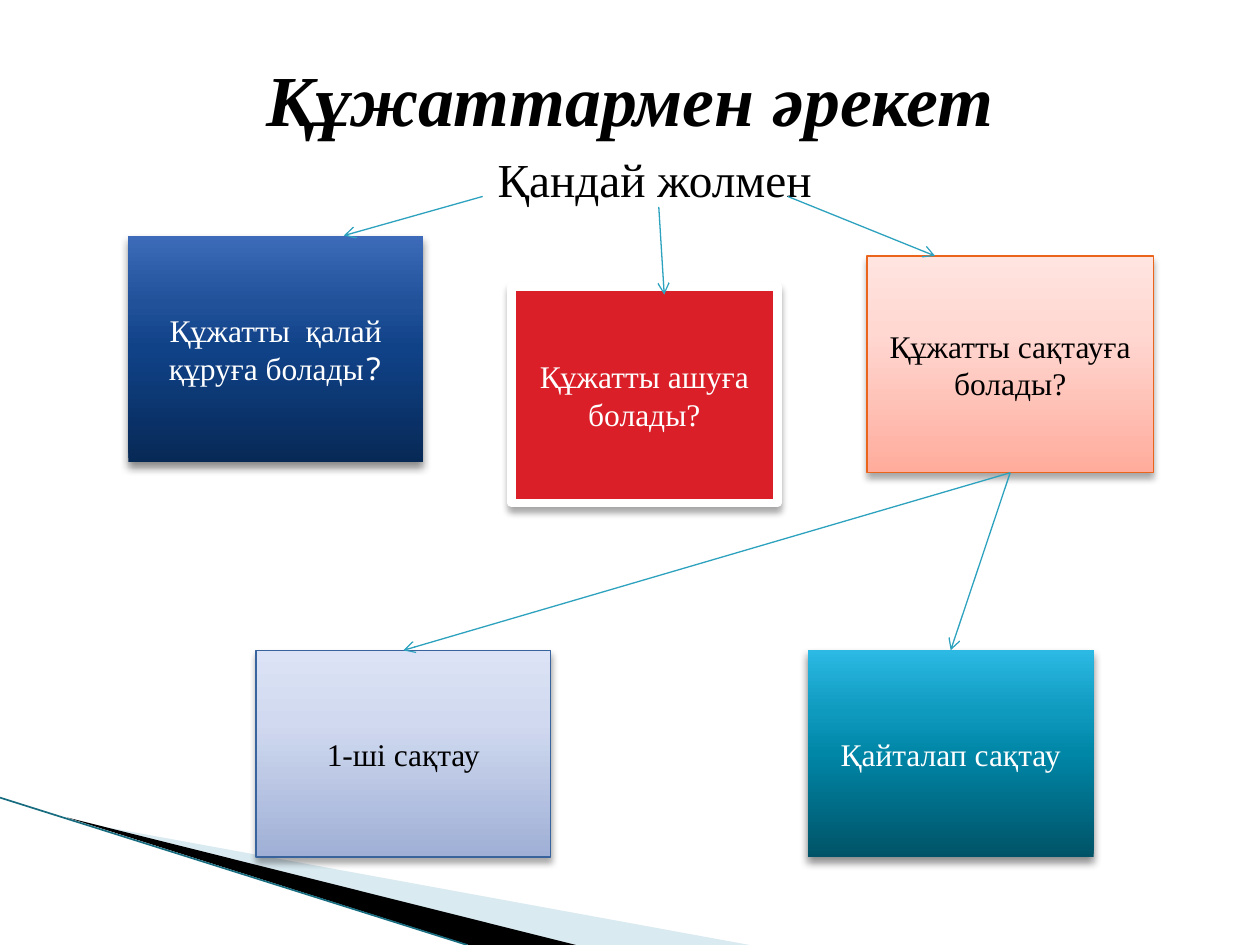
"""Build a slide that maps the ways of working with documents."""
from lxml import etree
from pptx import Presentation
from pptx import util as u
from pptx.dml.color import RGBColor
from pptx.enum import shapes, text
from pptx.oxml import ns

BLACK = RGBColor(0x00, 0x00, 0x00)
WHITE = RGBColor(0xFF, 0xFF, 0xFF)
RED = RGBColor(0xDA, 0x1F, 0x28)
ORANGE = RGBColor(0xEB, 0x64, 0x1B)
SLATE = RGBColor(0x39, 0x63, 0x9D)
TURQUOISE = RGBColor(0x2D, 0xA2, 0xBF)
DEEP_TEAL = RGBColor(0x18, 0x6C, 0x7F)
PALE_BLUE = RGBColor(0xA0, 0xCB, 0xDC)
BLUE_STOPS = [(0, RGBColor(0x07, 0x29, 0x56)), (50, RGBColor(0x10, 0x42, 0x88)),
              (70, RGBColor(0x20, 0x51, 0x99)), (100, RGBColor(0x3D, 0x6B, 0xB9))]
PEACH_STOPS = [(0, RGBColor(0xFF, 0xAC, 0x9C)), (65, RGBColor(0xFF, 0xD8, 0xD2)),
               (100, RGBColor(0xFF, 0xE4, 0xDF))]
LAVENDER_STOPS = [(0, RGBColor(0x9F, 0xAF, 0xD6)), (65, RGBColor(0xD0, 0xD9, 0xEF)),
                  (100, RGBColor(0xDC, 0xE3, 0xF6))]
TEAL_STOPS = [(0, RGBColor(0x00, 0x53, 0x67)), (50, RGBColor(0x00, 0x86, 0xA7)),
              (70, RGBColor(0x0E, 0x9A, 0xBE)), (100, RGBColor(0x2C, 0xB9, 0xE3))]


def add_element(parent, tag, **attributes):
    element = etree.SubElement(parent, ns.qn(tag))
    for name, value in attributes.items():
        element.set(name, str(value))
    return element


def add_line(start, end, color, width):
    points = [u.Cm(value) for value in (*start, *end)]
    connector = slide.shapes.add_connector(shapes.MSO_CONNECTOR.STRAIGHT, *points)
    connector.line.color.rgb = color
    connector.line.width = u.Pt(width)
    add_element(connector._element.spPr, "a:effectLst")
    return connector


presentation = Presentation()
presentation.slide_width = u.Cm(25.4)
presentation.slide_height = u.Cm(19.05)
slide = presentation.slides.add_slide(presentation.slide_layouts[6])

wedges = [
    ([(1.4, 16.54), (15.11, 19.05), (11.58, 19.05)], PALE_BLUE, 40),
    ([(1.35, 16.48), (11.61, 19.05), (9.45, 19.05)], BLACK, 100),
]
for corners, color, opacity in wedges:
    points = [(u.Cm(x), u.Cm(y)) for x, y in corners]
    builder = slide.shapes.build_freeform(*points[0])
    builder.add_line_segments(points[1:])
    wedge = builder.convert_to_shape()
    wedge.shadow.inherit = False
    wedge.fill.solid()
    wedge.fill.fore_color.rgb = color
    wedge.line.fill.background()
    if opacity < 100:
        color_element = wedge._element.spPr.find(".//" + ns.qn("a:srgbClr"))
        add_element(color_element, "a:alpha", val=opacity * 1000)
add_line((0, 16.08), (9.42, 19.05), DEEP_TEAL, 0.95)

headings = [
    ("Құжаттармен әрекет", (1.27, 0.58, 22.86, 2.77), 41, True, text.MSO_ANCHOR.MIDDLE),
    ("Қандай жолмен", (8.2, 2.9, 10, 1.3), 27, False, text.MSO_ANCHOR.TOP),
]
for wording, place, size, emphasis, anchor in headings:
    heading = slide.shapes.add_textbox(*[u.Cm(value) for value in place])
    frame = heading.text_frame
    frame.word_wrap = True
    frame.vertical_anchor = anchor
    frame.text = wording
    paragraph = frame.paragraphs[0]
    paragraph.alignment = text.PP_ALIGN.CENTER
    font = paragraph.runs[0].font
    font.name = "Times New Roman"
    font.size = u.Pt(size)
    font.bold = font.italic = emphasis
    font.color.rgb = BLACK

boxes = [
    ("Құжатты  қалай құруға болады", (2.59, 4.75, 5.94, 4.57), BLUE_STOPS, None, 0, WHITE),
    ("Құжатты ашуға болады?", (10.31, 5.77, 5.36, 4.37), RED, WHITE, 5, WHITE),
    ("Құжатты сақтауға болады?", (17.48, 5.16, 5.77, 4.37), PEACH_STOPS, ORANGE, 0.75, BLACK),
    ("1-ші сақтау", (5.16, 13.11, 5.94, 4.17), LAVENDER_STOPS, SLATE, 0.75, BLACK),
    ("Қайталап сақтау", (16.28, 13.11, 5.77, 4.17), TEAL_STOPS, None, 0, WHITE),
]
cards = []
for wording, place, filling, outline, outline_width, text_color in boxes:
    card = slide.shapes.add_shape(
        shapes.MSO_SHAPE.RECTANGLE, *[u.Cm(value) for value in place])
    if isinstance(filling, RGBColor):
        card.fill.solid()
        card.fill.fore_color.rgb = filling
    else:
        card.fill.gradient()
        card.fill.gradient_angle = 90
        stop_list = card._element.spPr.find(".//" + ns.qn("a:gsLst"))
        for old_stop in list(stop_list):
            stop_list.remove(old_stop)
        for position, color in filling:
            stop = add_element(stop_list, "a:gs", pos=position * 1000)
            add_element(stop, "a:srgbClr", val=color)
    if outline is None:
        card.line.fill.background()
    else:
        card.line.color.rgb = outline
        card.line.width = u.Pt(outline_width)

    card.shadow.inherit = False
    blur, opacity = (4, 35) if outline else (5, 45)
    effects = card._element.spPr.find(ns.qn("a:effectLst"))
    shadow = add_element(effects, "a:outerShdw", blurRad=int(u.Pt(blur)),
                         dist=int(u.Pt(3)), dir=5400000, rotWithShape=0)
    shadow_color = add_element(shadow, "a:srgbClr", val=BLACK)
    add_element(shadow_color, "a:alpha", val=opacity * 1000)

    frame = card.text_frame
    frame.word_wrap = True
    frame.vertical_anchor = text.MSO_ANCHOR.MIDDLE
    frame.text = wording
    paragraph = frame.paragraphs[0]
    paragraph.alignment = text.PP_ALIGN.CENTER
    font = paragraph.runs[0].font
    font.name = "Times New Roman"
    font.size = u.Pt(18)
    font.color.rgb = text_color
    cards.append(card)

create_card, open_card, save_card, first_save_card, save_again_card = cards
question_mark = create_card.text_frame.paragraphs[0].add_run()
question_mark.text = "?"
question_mark.font.name = "Noto Sans Mono"
question_mark.font.size = u.Pt(18)
question_mark.font.color.rgb = WHITE

arrows = [
    ((13.28, 4.17), (13.39, 5.94), None),
    ((15.88, 3.96), (18.85, 5.16), None),
    ((9.73, 3.96), (6.93, 4.75), None),
    ((20.36, 9.53), (8.13, 13.11), first_save_card),
    ((20.36, 9.53), (19.16, 13.11), save_again_card),
]
for start, end, target in arrows:
    arrow = add_line(start, end, TURQUOISE, 0.75)
    add_element(arrow.line._get_or_add_ln(), "a:tailEnd", type="arrow")
    if target is not None:
        arrow.begin_connect(save_card, 2)
        arrow.end_connect(target, 0)

presentation.save("out.pptx")
